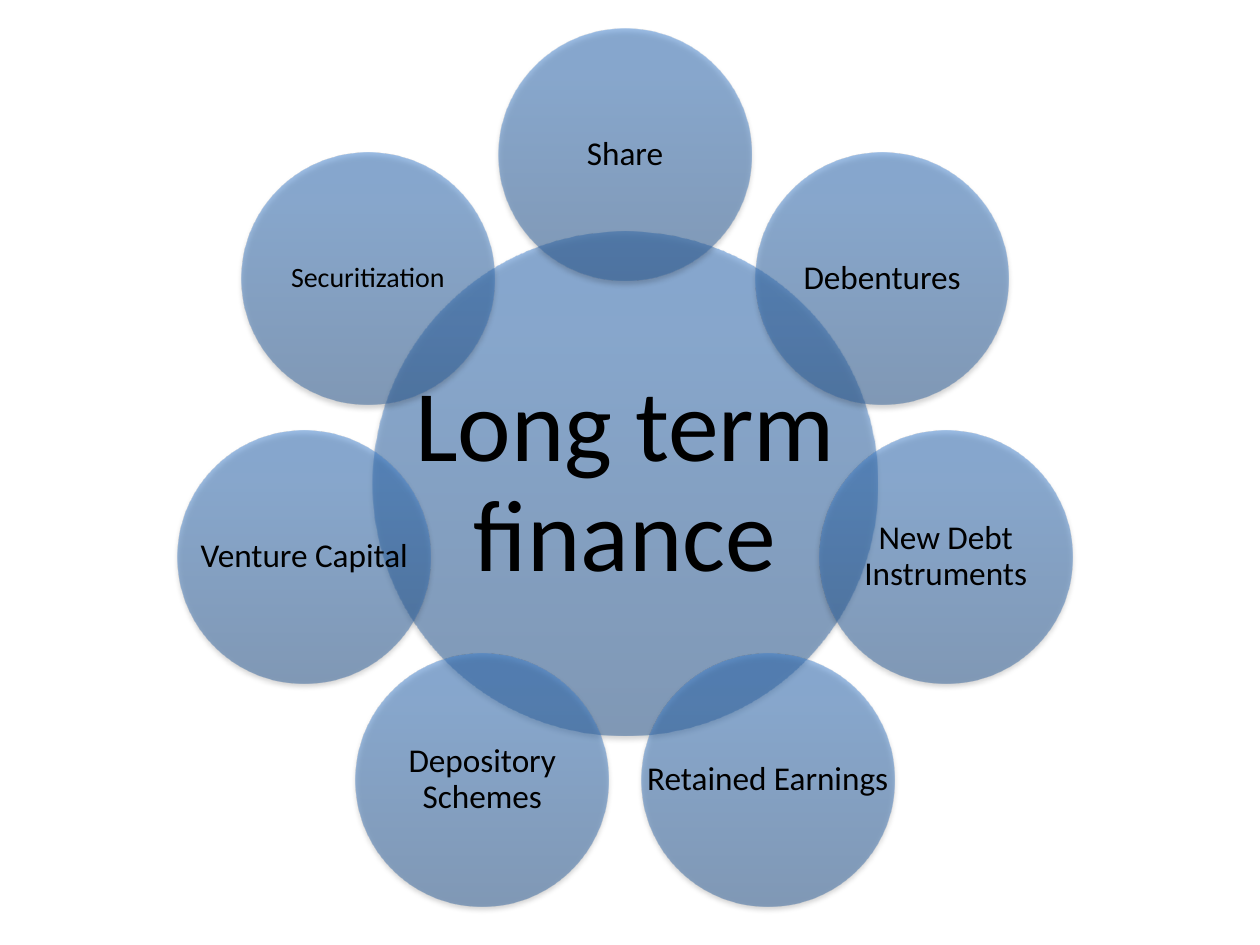
import math

import lxml.etree
import pptx
import pptx.dml.color
import pptx.enum.shapes
import pptx.enum.text
import pptx.oxml.ns
import pptx.util

Cm, Pt, qn = pptx.util.Cm, pptx.util.Pt, pptx.oxml.ns.qn

HUB_CENTRE = (12.6, 9.75)
HUB_DIAMETER = 10.17
PETAL_DIAMETER = 5.09
ORBIT_RADIUS = 6.63
GRADIENT = [(0, "2F5F99"), (80, "3D7CC7"), (100, "3A7CCB")]
SOURCES = [
    ("Share", 19),
    ("Debentures", 19),
    ("New Debt Instruments", 19),
    ("Retained Earnings", 19),
    ("Depository Schemes", 19),
    ("Venture Capital", 19),
    ("Securitization", 16),
]


def colour(hex_code):
    """Return the RGB colour for a hex string."""
    return pptx.dml.color.RGBColor.from_string(hex_code)


def apply_format(target, values):
    """Set each named attribute on the target."""
    for name, value in values.items():
        setattr(target, name, value)


def add_colour_xml(parent, hex_code, opacity):
    """Append a partly transparent colour to a fill stop or shadow."""
    tint = lxml.etree.SubElement(parent, qn("a:srgbClr"), val=hex_code)
    lxml.etree.SubElement(tint, qn("a:alpha"), val=str(opacity * 1000))


def fill_with_gradient(circle):
    """Give the circle a half-transparent gradient rising from its base."""
    circle.fill.gradient()
    circle.fill.gradient_angle = 90
    stops = circle.element.spPr.find(".//" + qn("a:gsLst"))
    for stop in list(stops):
        stops.remove(stop)
    for position, hex_code in GRADIENT:
        stop = lxml.etree.SubElement(stops, qn("a:gs"), pos=str(position * 1000))
        add_colour_xml(stop, hex_code, 50)


def add_soft_shadow(circle):
    """Cast a faint shadow straight below the circle."""
    circle.shadow.inherit = False
    effects = circle.element.spPr.find(qn("a:effectLst"))
    shadow = lxml.etree.SubElement(
        effects, qn("a:outerShdw"), blurRad=str(Pt(3.1)), dist=str(Pt(1.8)),
        dir="5400000", rotWithShape="0")
    add_colour_xml(shadow, "000000", 35)


def add_label(diagram, box, wording, size):
    """Centre wording in a box as wide as its circle."""
    label = diagram.shapes.add_textbox(*box)
    inset = Pt(size * 0.1)
    apply_format(label.text_frame, {
        "word_wrap": True,
        "vertical_anchor": pptx.enum.text.MSO_ANCHOR.MIDDLE,
        "margin_left": inset, "margin_right": inset,
        "margin_top": inset, "margin_bottom": inset,
    })
    paragraph = label.text_frame.paragraphs[0]
    apply_format(paragraph, {
        "text": wording,
        "alignment": pptx.enum.text.PP_ALIGN.CENTER,
        "line_spacing": 0.9,
    })
    properties = label.element.find(".//" + qn("a:pPr"))
    after = lxml.etree.SubElement(properties, qn("a:spcAft"))
    lxml.etree.SubElement(after, qn("a:spcPct"), val="35000")
    font = paragraph.runs[0].font
    apply_format(font, {"name": "Calibri", "size": Pt(size)})
    font.color.rgb = colour("000000")


def add_circle(diagram, centre, diameter, wording, size):
    """Add a labelled circle around a centre point."""
    left, top = (Cm(middle - diameter / 2) for middle in centre)
    box = (left, top, Cm(diameter), Cm(diameter))
    circle = diagram.shapes.add_shape(pptx.enum.shapes.MSO_SHAPE.OVAL, *box)
    fill_with_gradient(circle)
    circle.line.fill.background()
    add_soft_shadow(circle)
    add_label(diagram, box, wording, size)


def main():
    """Build the radial diagram of long term finance sources."""
    deck = pptx.Presentation()
    apply_format(deck, {"slide_width": Cm(25.4), "slide_height": Cm(19.05)})
    slide = deck.slides.add_slide(deck.slide_layouts[6])
    diagram = slide.shapes.add_group_shape()
    add_circle(diagram, HUB_CENTRE, HUB_DIAMETER, "Long term finance", 58)
    for index, (source, size) in enumerate(SOURCES):
        angle = 2 * math.pi * index / len(SOURCES)
        centre = (HUB_CENTRE[0] + ORBIT_RADIUS * math.sin(angle),
                  HUB_CENTRE[1] - ORBIT_RADIUS * math.cos(angle))
        add_circle(diagram, centre, PETAL_DIAMETER, source, size)
    deck.save("out.pptx")


if __name__ == "__main__":
    main()
